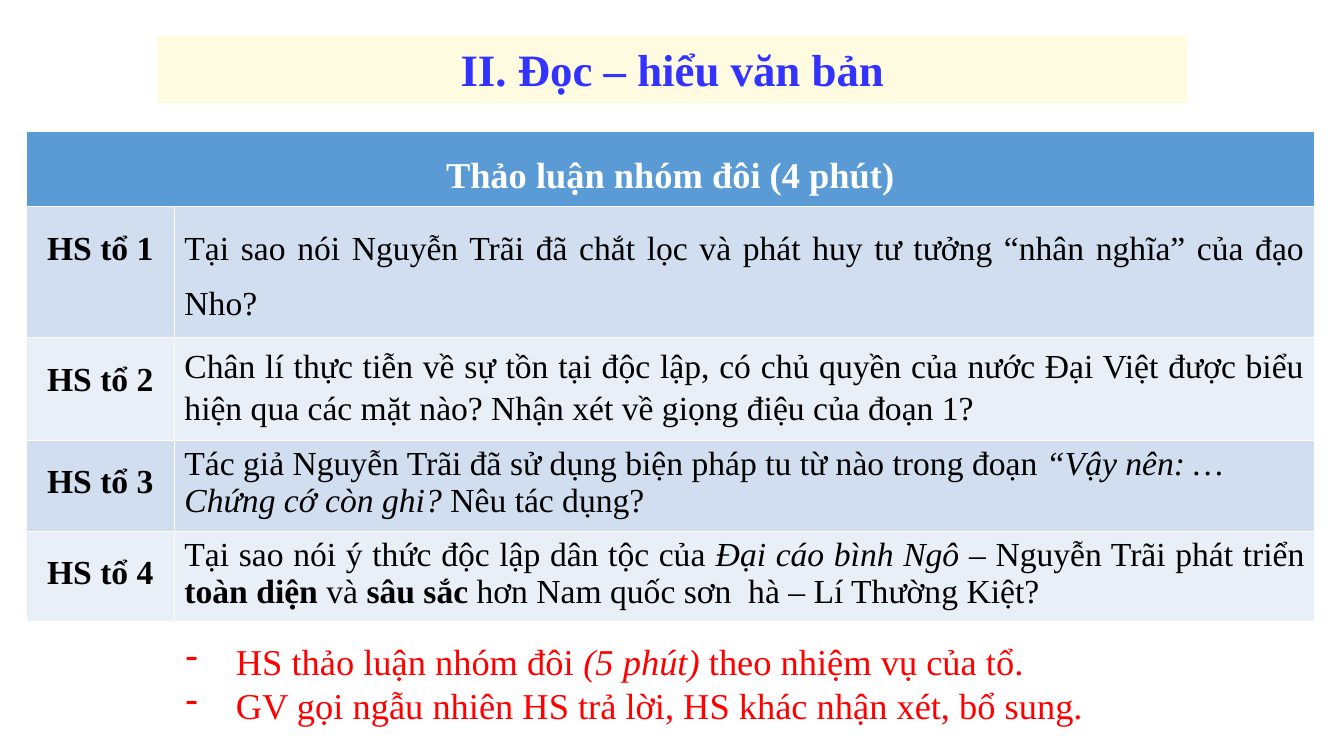
from dataclasses import dataclass

from lxml import etree
from pptx import Presentation
from pptx.dml.color import RGBColor
from pptx.enum.text import MSO_ANCHOR, MSO_AUTO_SIZE, PP_ALIGN
from pptx.oxml.ns import qn
from pptx.util import Inches, Pt

LEFT, CENTER, JUSTIFY = PP_ALIGN.LEFT, PP_ALIGN.CENTER, PP_ALIGN.JUSTIFY

# A run is (text, style); style holds "b" for bold, "i" for italic.
TITLE = [("II. Đọc – hiểu văn bản", "b")]
HEADER = [("Thảo luận nhóm đôi (4 phút)", "b")]
# group, question runs, alignment, line spacing, row height in inches
TASKS = [
    ("HS tổ 1",
     [("Tại sao nói Nguyễn Trãi đã chắt lọc và phát huy tư tưởng “nhân nghĩa” của đạo Nho?", "")],
     JUSTIFY, 1.5, 1.3),
    ("HS tổ 2",
     [("Chân lí thực tiễn về sự tồn tại độc lập, có chủ quyền của nước Đại Việt được biểu "
       "hiện qua các mặt nào? Nhận xét về giọng điệu của đoạn 1?", "")],
     JUSTIFY, 1.15, 1.02),
    ("HS tổ 3",
     [("Tác giả Nguyễn Trãi đã sử dụng biện pháp tu từ nào trong đoạn ", ""),
      ("“Vậy nên: …Chứng cớ còn ghi? ", "i"), ("Nêu tác dụng?", "")],
     LEFT, 1.0, 0.9),
    ("HS tổ 4",
     [("Tại sao nói ý thức độc lập dân tộc của ", ""), ("Đại cáo bình Ngô", "i"),
      (" – Nguyễn Trãi phát triển ", ""), ("toàn diện", "b"), (" và ", ""),
      ("sâu sắc", "b"), (" hơn Nam quốc sơn  hà – Lí Thường Kiệt?", "")],
     JUSTIFY, 1.0, 0.9),
]
NOTES = [
    [("HS thảo luận nhóm đôi ", ""), ("(5 phút) ", "i"), ("theo nhiệm vụ của tổ.", "")],
    [("GV gọi ngẫu nhiên HS trả lời, HS khác nhận xét, bổ sung.", "")],
]
HEADER_HEIGHT = 0.75
COLUMNS = (1.47, 11.31)


@dataclass(frozen=True)
class Theme:
    font: str = "Times New Roman"
    title_size: int = 32
    head_size: int = 26
    cell_size: int = 24
    title: str = "3333FF"
    banner: str = "FEFBE0"
    header: str = "5B9BD5"
    bands: tuple = ("D0DEEF", "E9EFF7")
    white: str = "FFFFFF"
    black: str = "000000"
    red: str = "FF0000"


THEME = Theme()


def place(shape, left, top, width, height):
    shape.left, shape.top = Inches(left), Inches(top)
    shape.width, shape.height = Inches(width), Inches(height)


def paint(target, color):
    target.fill.solid()
    target.fill.fore_color.rgb = RGBColor.from_string(color)


def write(p, runs, size, color, align, spacing=1.0):
    p.alignment, p.line_spacing, p.space_before = align, spacing, Pt(0)
    p.font.name, p.font.size = THEME.font, Pt(size)
    p.font.color.rgb = RGBColor.from_string(color)
    for text, style in runs:
        r = p.add_run()
        r.text = text
        r.font.bold, r.font.italic = "b" in style, "i" in style


def add_dash(p, color):
    pPr = p._p.get_or_add_pPr()
    pPr.set("marL", str(Inches(0.5)))
    pPr.set("indent", str(-Inches(0.5)))
    bullet = [etree.Element(qn(tag)) for tag in ("a:buClr", "a:buFontTx", "a:buChar")]
    etree.SubElement(bullet[0], qn("a:srgbClr"), val=color)
    bullet[2].set("char", "-")
    anchor = pPr.find(qn("a:defRPr"))
    for element in bullet:
        anchor.addprevious(element)


def fill_cell(cell, fill, *text):
    paint(cell, fill)
    write(cell.text_frame.paragraphs[0], *text)


def add_tasks(s):
    heights = [HEADER_HEIGHT] + [task[-1] for task in TASKS]
    table = s.shapes.add_table(
        len(heights), len(COLUMNS), Inches(0.26), Inches(1.3),
        Inches(sum(COLUMNS)), Inches(sum(heights))).table
    for column, width in zip(table.columns, COLUMNS):
        column.width = Inches(width)
    for row, height in zip(table.rows, heights):
        row.height = Inches(height)
    table.cell(0, 0).merge(table.cell(0, 1))
    fill_cell(table.cell(0, 0), THEME.header, HEADER, THEME.head_size, THEME.white, CENTER, 1.5)
    for i, (group, question, align, spacing, _) in enumerate(TASKS):
        band = THEME.bands[i % 2]
        fill_cell(table.cell(i + 1, 0), band, [(group, "b")],
                  THEME.cell_size, THEME.black, CENTER, 1.5)
        fill_cell(table.cell(i + 1, 1), band, question,
                  THEME.cell_size, THEME.black, align, spacing)


def main():
    prs = Presentation()
    prs.slide_width, prs.slide_height = Inches(13.33), Inches(7.5)
    s = prs.slides.add_slide(prs.slide_layouts[1])

    title, notes = s.shapes.title, s.placeholders[1]
    place(title, 1.56, 0.35, 10.22, 0.67)
    paint(title, THEME.banner)
    title.text_frame.vertical_anchor = MSO_ANCHOR.MIDDLE
    write(title.text_frame.paragraphs[0], TITLE, THEME.title_size, THEME.title, CENTER)

    place(notes, 1.74, 6.29, 9.54, 0.98)
    for i, runs in enumerate(NOTES):
        tf = notes.text_frame
        p = tf.add_paragraph() if i else tf.paragraphs[0]
        write(p, runs, THEME.head_size, THEME.red, JUSTIFY)
        add_dash(p, THEME.red)

    for shape in (title, notes):
        shape.text_frame.auto_size = MSO_AUTO_SIZE.NONE
    add_tasks(s)
    prs.save("out.pptx")


if __name__ == "__main__":
    main()
